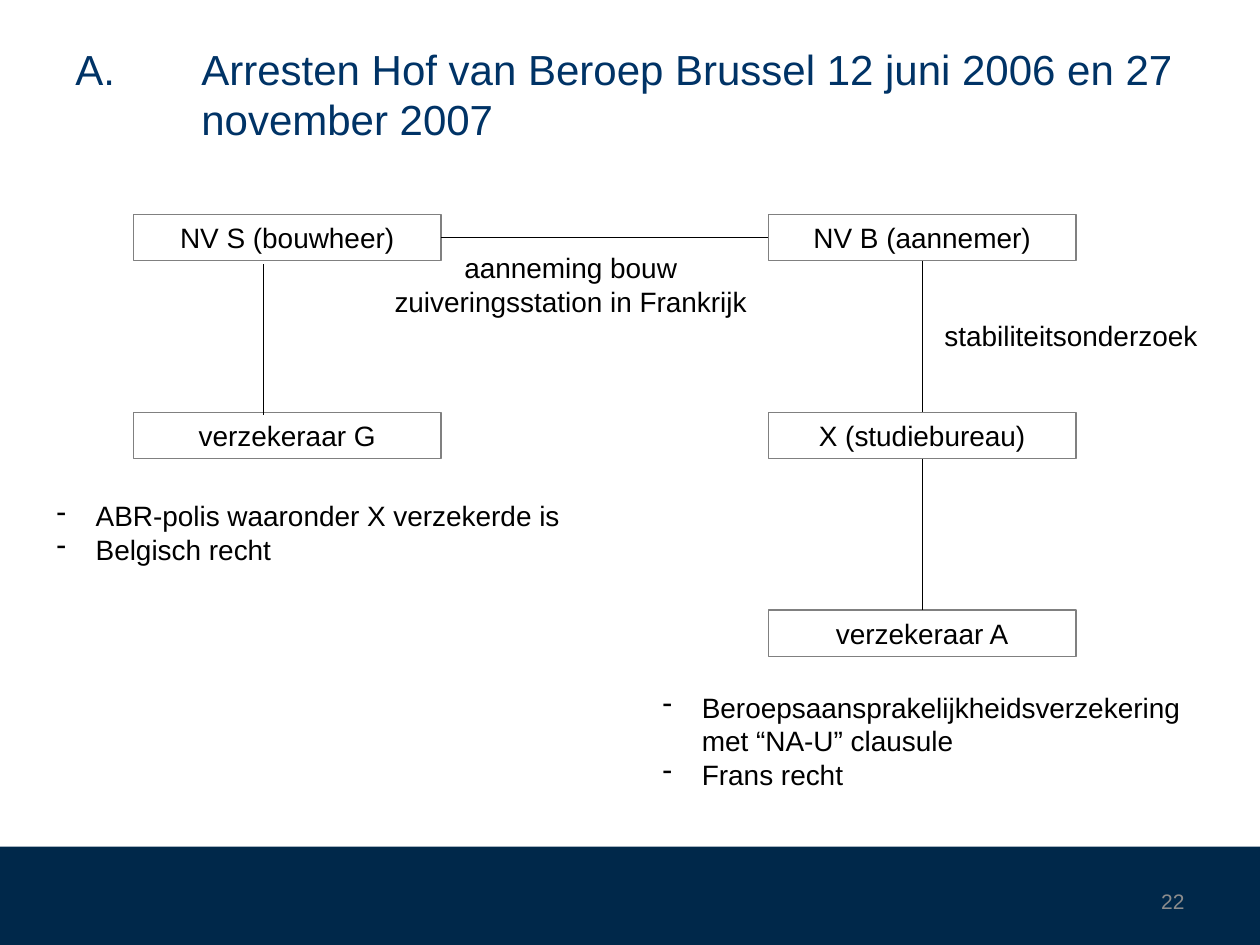
from typing import NamedTuple

from lxml.etree import SubElement
from pptx import Presentation
from pptx.dml.color import RGBColor
from pptx.enum.shapes import MSO_CONNECTOR, MSO_SHAPE
from pptx.enum.text import MSO_ANCHOR as Anchor, PP_ALIGN as Align
from pptx.oxml.ns import qn
from pptx.util import Cm, Pt

BOX_W, BOX_H = 6.2, 0.94
LEFT, RIGHT = 2.69, 15.49
ROWS = [4.32 + i * 3.99 for i in range(3)]
BLACK = "000000"


class Party(NamedTuple):
    name: str
    x: float
    y: float


class Label(NamedTuple):
    text: str
    x: float
    y: float
    w: float
    h: float
    size: int = 16
    color: str = BLACK
    align: Align = Align.CENTER
    anchor: Anchor = Anchor.TOP
    hanging: float = 0


class Notes(NamedTuple):
    items: list[str]
    x: float
    y: float
    h: float


class Link(NamedTuple):
    x1: float
    y1: float
    x2: float
    y2: float


PARTIES = [
    Party("NV S (bouwheer)", LEFT, ROWS[0]),
    Party("NV B (aannemer)", RIGHT, ROWS[0]),
    Party("X (studiebureau)", RIGHT, ROWS[1]),
    Party("verzekeraar G", LEFT, ROWS[1]),
    Party("verzekeraar A", RIGHT, ROWS[2]),
]
LABELS = [
    Label("A.\tArresten Hof van Beroep Brussel 12 juni 2006 en 27 november 2007",
          1.27, 0.76, 22.86, 2.26, 24, "003366", Align.LEFT, Anchor.MIDDLE, 2.54),
    Label("stabiliteitsonderzoek", 18.49, 6.3, 6.2, 0.94),
    Label("aanneming bouw zuiveringsstation in Frankrijk", 7.11, 4.93, 8.79, 1.63),
    Label("22", 18.21, 17.65, 5.92, 1.02, 12, "8C8C8C", Align.RIGHT, Anchor.MIDDLE),
]
NOTES = [
    Notes(["Beroepsaansprakelijkheidsverzekering met “NA-U” clausule", "Frans recht"],
          13.11, 13.79, 2.31),
    Notes(["ABR-polis waaronder X verzekerde is", "Belgisch recht"], 0.89, 9.93, 1.63),
]
MID_X = RIGHT + BOX_W / 2
MID_Y = ROWS[0] + BOX_H / 2
LINKS = [
    Link(LEFT + BOX_W, MID_Y, RIGHT, MID_Y),
    *[Link(MID_X, top + BOX_H, MID_X, below) for top, below in zip(ROWS, ROWS[1:])],
    Link(5.31, 5.33, 5.31, 8.36),
]


def rgb(value: str) -> RGBColor:
    return RGBColor.from_string(value)


def add_run(p, text: str, size: int = 16, color: str = BLACK) -> None:
    r = p.add_run()
    r.text = text
    r.font.name = "Arial"
    r.font.size = Pt(size)
    r.font.color.rgb = rgb(color)


def set_hanging(p, indent: float) -> None:
    """Indent all lines of the paragraph but the first."""
    pPr = p._p.get_or_add_pPr()
    pPr.set("marL", str(Cm(indent)))
    pPr.set("indent", str(-Cm(indent)))


def add_frame(s, x: float, y: float, w: float, h: float):
    tf = s.shapes.add_textbox(Cm(x), Cm(y), Cm(w), Cm(h)).text_frame
    tf.word_wrap = True
    return tf


def add_rect(s, x: float, y: float, w: float, h: float):
    sp = s.shapes.add_shape(MSO_SHAPE.RECTANGLE, Cm(x), Cm(y), Cm(w), Cm(h))
    sp.shadow.inherit = False
    return sp


def add_footer(s) -> None:
    sp = add_rect(s, 0, 17.07, 25.4, 1.98)
    sp.fill.solid()
    sp.fill.fore_color.rgb = rgb("00284A")
    sp.line.fill.background()


def add_party(s, party: Party) -> None:
    sp = add_rect(s, party.x, party.y, BOX_W, BOX_H)
    sp.fill.background()
    sp.line.color.rgb = rgb("808080")
    sp.line.width = Pt(0.75)
    tf = sp.text_frame
    tf.word_wrap = True
    tf.vertical_anchor = Anchor.TOP
    p = tf.paragraphs[0]
    p.alignment = Align.CENTER
    add_run(p, party.name)


def add_label(s, label: Label) -> None:
    tf = add_frame(s, label.x, label.y, label.w, label.h)
    tf.vertical_anchor = label.anchor
    p = tf.paragraphs[0]
    p.alignment = label.align
    if label.hanging:
        set_hanging(p, label.hanging)
    add_run(p, label.text, label.size, label.color)


def add_notes(s, notes: Notes) -> None:
    tf = add_frame(s, notes.x, notes.y, 11.4, notes.h)
    for i, item in enumerate(notes.items):
        p = tf.add_paragraph() if i else tf.paragraphs[0]
        set_hanging(p, 0.79)
        SubElement(p._p.get_or_add_pPr(), qn("a:buChar"), char="-")
        add_run(p, item)


def add_link(s, link: Link) -> None:
    line = s.shapes.add_connector(MSO_CONNECTOR.STRAIGHT, *map(Cm, link))
    line.line.color.rgb = rgb(BLACK)
    line.line.width = Pt(0.75)
    SubElement(line._element.spPr, qn("a:effectLst"))


def main() -> None:
    prs = Presentation()
    prs.slide_width, prs.slide_height = Cm(25.4), Cm(19.05)
    s = prs.slides.add_slide(prs.slide_layouts[6])
    add_footer(s)
    for party in PARTIES:
        add_party(s, party)
    for label in LABELS:
        add_label(s, label)
    for notes in NOTES:
        add_notes(s, notes)
    for link in LINKS:
        add_link(s, link)
    prs.save("out.pptx")


if __name__ == "__main__":
    main()
